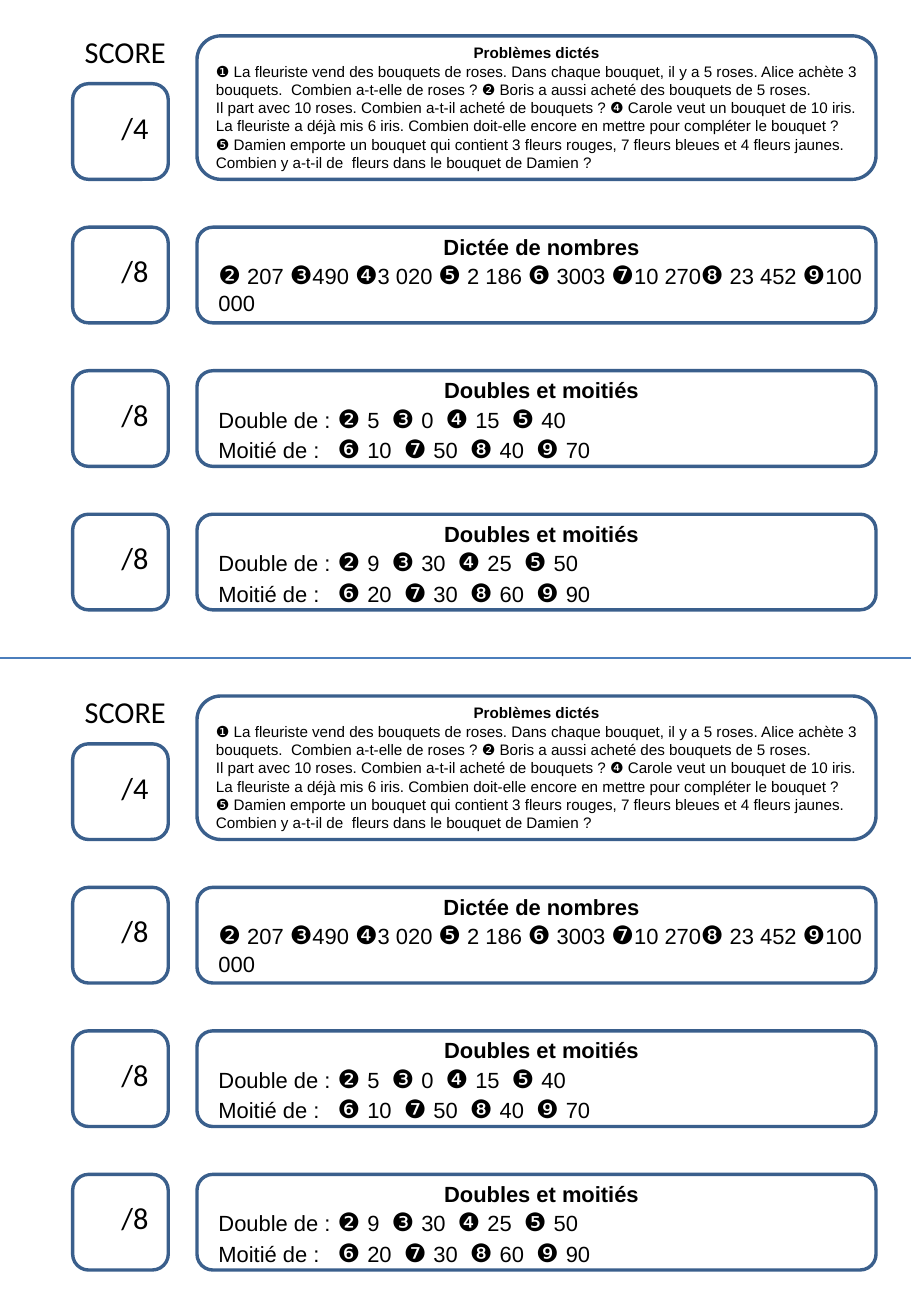
"""Build a sheet with two identical mental arithmetic tests and their scores."""
from dataclasses import dataclass

from lxml.etree import SubElement
from pptx import Presentation
from pptx.dml.color import RGBColor as Rgb
from pptx.enum.shapes import MSO_CONNECTOR as Conn, MSO_SHAPE as Form
from pptx.enum.text import MSO_ANCHOR as Anchor, MSO_AUTO_SIZE as Auto, PP_ALIGN as Align
from pptx.oxml import parse_xml
from pptx.oxml.ns import nsdecls, qn
from pptx.util import Cm, Pt


@dataclass(frozen=True)
class Theme:
    """Hold the colours, fonts and type sizes."""
    ink: Rgb = Rgb(0, 0, 0)
    edge: Rgb = Rgb(0x3A, 0x5F, 0x8C)
    rule: Rgb = Rgb(0x4B, 0x7E, 0xBC)
    body: str = "Arial"
    score: str = "Calibri"
    small: int = 9
    text: int = 13
    mark: int = 15
    large: int = 18


class Sheet:
    """Draw the elements of the current slide in one style."""

    def __init__(self, slide, theme):
        """Keep the slide and its theme."""
        self.slide, self.theme = slide, theme

    def line(self, y, width):
        """Draw a level line from the left edge."""
        line = self.slide.shapes.add_connector(Conn.STRAIGHT, 0, Cm(y), Cm(width), Cm(y))
        line.line.color.rgb = self.theme.rule
        line.line.width = Pt(0.75)
        SubElement(line._element.spPr, qn("a:effectLst"))

    def box(self, x, y, w, h):
        """Draw an empty rounded frame and return its text frame."""
        box = self.slide.shapes.add_shape(
            Form.FLOWCHART_ALTERNATE_PROCESS, Cm(x), Cm(y), Cm(w), Cm(h))
        box.shadow.inherit = False
        box.fill.background()
        box.line.color.rgb = self.theme.edge
        box.line.width = Pt(2)
        return box.text_frame

    def area(self, x, y, w, h):
        """Add a wrapping text box and return its text frame."""
        frame = self.slide.shapes.add_textbox(Cm(x), Cm(y), Cm(w), Cm(h)).text_frame
        frame.word_wrap = True
        frame.auto_size = Auto.SHAPE_TO_FIT_TEXT
        return frame

    def para(self, frame, text, size, face, bold=False):
        """Write a paragraph whose parts after each bar alternate in size."""
        used = frame.paragraphs[0].runs
        para = frame.add_paragraph() if used else frame.paragraphs[0]
        para.alignment = Align.CENTER if bold else Align.LEFT
        font = para.font
        font.name, font.size, font.bold = face, Pt(size), bold
        font.color.rgb = self.theme.ink
        for i, part in enumerate(text.split("|")):
            if part:
                run = para.add_run()
                run.text = part
                if i % 2:
                    run.font.size = Pt(self.theme.mark)
        if "\t" in text:
            tabs = f'<a:tabLst {nsdecls("a")}><a:tab pos="{Cm(2.49)}" algn="l"/></a:tabLst>'
            para._p.get_or_add_pPr().insert(0, parse_xml(tabs))

    def label(self, text, x, y, w, inset=0.25):
        """Write a word or a mark of the score column."""
        frame = self.area(x, y, w, 1.02)
        frame.margin_left = Cm(inset)
        self.para(frame, text, self.theme.large, self.theme.score)

    def block(self, frame, title, lines, size):
        """Write a centred bold title with plain lines below it."""
        self.para(frame, title, size, self.theme.body, True)
        for line in lines:
            self.para(frame, line, size, self.theme.body)


def drill(name, marks, values):
    """Return a line of numbered values after its name."""
    pairs = "  ".join(f"|{mark} |{value}" for mark, value in zip(marks, values))
    return f"{name} de :\t{pairs}"


def twice(low, high):
    """Return the two lines of an exercise on doubles and halves."""
    return [drill("Double", "❷❸❹❺", low), drill("Moitié", "❻❼❽❾", high)]


WIDTH, HEIGHT = 19.05, 27.51
HALF, STEP, SIDE = 13.8, 3, 2
LEFT, MAIN, WIDE = 1.52, 4.12, 14.2
STORY = [
    "❶ La ﬂeuriste vend des bouquets de roses. Dans chaque bouquet, il y a 5 roses. "
    "Alice achète 3 bouquets.  Combien a-t-elle de roses ? "
    "❷ Boris a aussi acheté des bouquets de 5 roses.",
    "Il part avec 10 roses. Combien a-t-il acheté de bouquets ? "
    "❹ Carole veut un bouquet de 10 iris. La ﬂeuriste a déjà mis 6 iris. "
    "Combien doit-elle encore en mettre pour compléter le bouquet ?  "
    "❺ Damien emporte un bouquet qui contient 3 ﬂeurs rouges, 7 ﬂeurs bleues "
    "et 4 ﬂeurs jaunes. Combien y a-t-il de  fleurs dans le bouquet de Damien ?",
]
TASKS = [
    ("Dictée de nombres", ["|❷| 207 |❸|490 |❹|3 020 |❺| 2 186 |❻| 3003 "
                           "|❼|10 270|❽| 23 452 |❾|100 000"]),
    ("Doubles et moitiés", twice((5, 0, 15, 40), (10, 50, 40, 70))),
    ("Doubles et moitiés", twice((9, 30, 25, 50), (20, 30, 60, 90))),
]


def test(sheet, top):
    """Draw one whole test below the given height."""
    theme = sheet.theme
    sheet.label("SCORE", LEFT, top + 0.56, 3.4)
    for row, score in enumerate(("/4", "/8", "/8", "/8")):
        y = top + 1.75 + row * STEP
        sheet.box(LEFT, y, SIDE, SIDE)
        sheet.label(score, LEFT + 0.2, y + 0.4, SIDE, 0.82)
    frame = sheet.box(MAIN, top + 0.75, WIDE, 3)
    frame.word_wrap = True
    frame.vertical_anchor = Anchor.MIDDLE
    sheet.block(frame, "Problèmes dictés", STORY, theme.small)
    for row, (title, lines) in enumerate(TASKS, 1):
        y = top + 1.75 + row * STEP
        sheet.box(MAIN, y, WIDE, SIDE)
        frame = sheet.area(MAIN + 0.2, y, WIDE - 0.2, 2.08)
        sheet.block(frame, title, lines, theme.text)


def main():
    """Build and save the sheet."""
    deck = Presentation()
    deck.slide_width, deck.slide_height = Cm(WIDTH), Cm(HEIGHT)
    sheet = Sheet(deck.slides.add_slide(deck.slide_layouts[6]), Theme())
    sheet.line(HEIGHT / 2, WIDTH)
    for half in range(2):
        test(sheet, half * HALF)
    deck.save("out.pptx")


if __name__ == "__main__":
    main()
